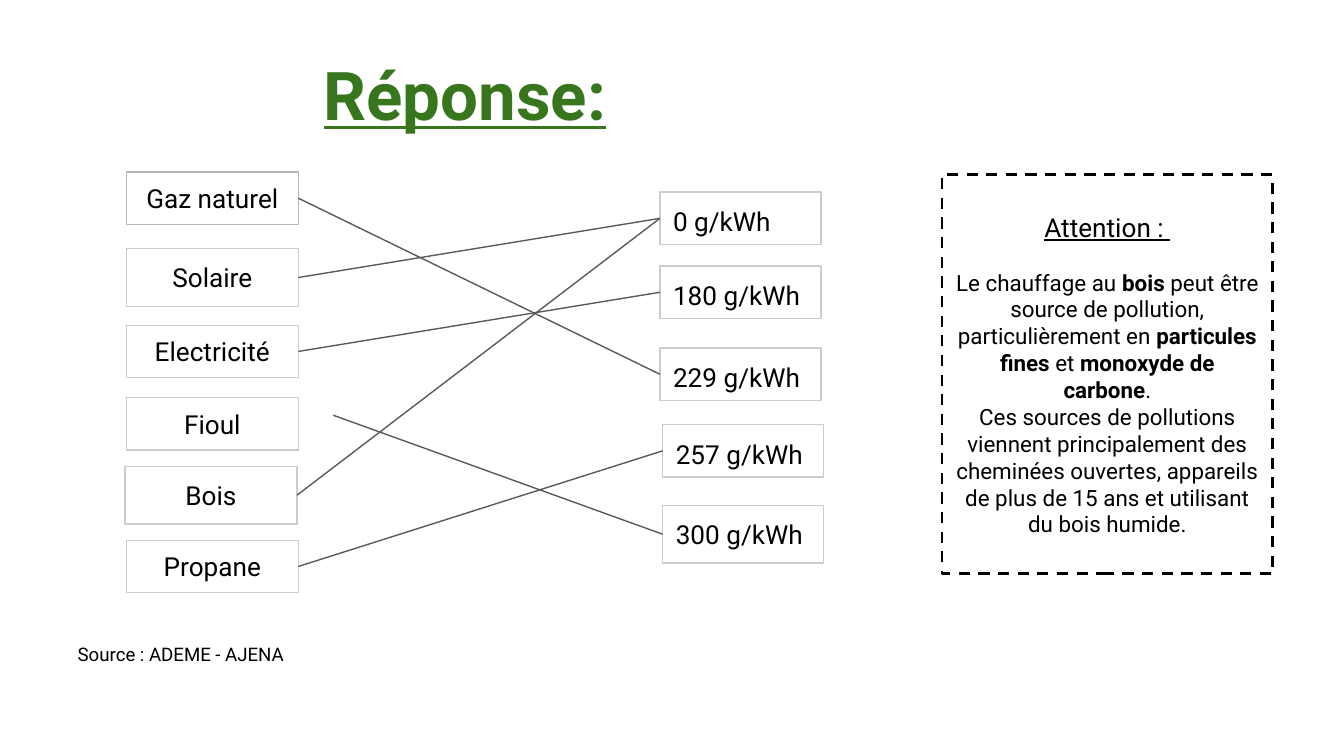
import pptx
import pptx.dml.color
import pptx.enum.dml
import pptx.enum.shapes
import pptx.enum.text
import pptx.oxml.ns
import pptx.util
from lxml import etree
from pptx.util import Inches

FONT = "Roboto"
ALIGN = pptx.enum.text.PP_ALIGN
ANCHOR = pptx.enum.text.MSO_ANCHOR
LEFT, RIGHT = 1, 3

ENERGIES = [
    ("Gaz naturel", 0.94, 1.28, 0.39, "B7B7B7"),
    ("Solaire", 0.94, 1.85, 0.43, "CCCCCC"),
    ("Electricité", 0.94, 2.42, 0.39, "CCCCCC"),
    ("Fioul", 0.94, 2.96, 0.39, "CCCCCC"),
    ("Bois", 0.93, 3.47, 0.43, "CCCCCC"),
    ("Propane", 0.94, 4.02, 0.39, "CCCCCC"),
]
EMISSIONS = [
    ("0 g/kWh", 4.91, 1.43, 0.39),
    ("180 g/kWh", 4.91, 1.98, 0.39),
    ("229 g/kWh", 4.91, 2.59, 0.39),
    ("257 g/kWh", 4.93, 3.16, 0.39),
    ("300 g/kWh", 4.93, 3.76, 0.43),
]
ANSWERS = [
    ("Solaire", "0 g/kWh"),
    ("Bois", "0 g/kWh"),
    ("Electricité", "180 g/kWh"),
    ("Propane", "257 g/kWh"),
    ("Gaz naturel", "229 g/kWh"),
]
WARNING = [
    ("Le chauffage au ", False),
    ("bois", True),
    (" peut être source de pollution, particulièrement en ", False),
    ("particules fines", True),
    (" et ", False),
    ("monoxyde de carbone", True),
    (".", False),
]
ADVICE = (
    "Ces sources de pollutions viennent principalement des cheminées ouvertes, "
    "appareils de plus de 15 ans et utilisant du bois humide."
)


def rgb(value):
    """Return the colour for a hex string."""
    return pptx.dml.color.RGBColor.from_string(value)


def add_run(p, text, size=14, color="000000", bold=False, underline=False):
    """Append a formatted run to a paragraph."""
    r = p.add_run()
    r.text = text
    r.font.name = FONT
    r.font.size = pptx.util.Pt(size)
    r.font.color.rgb = rgb(color)
    r.font.bold = bold
    r.font.underline = underline


def set_frame(sp, anchor):
    """Set wrapping, margins and anchor."""
    tf = sp.text_frame
    tf.word_wrap = True
    tf.vertical_anchor = anchor
    tf.margin_left = tf.margin_right = Inches(0.1)
    tf.margin_top = tf.margin_bottom = Inches(0.1)


def add_box(s, x, y, w, h, line="CCCCCC", width=0.75, anchor=ANCHOR.MIDDLE):
    """Add an outlined rectangle without fill."""
    kind = pptx.enum.shapes.MSO_SHAPE.RECTANGLE
    sp = s.shapes.add_shape(kind, Inches(x), Inches(y), Inches(w), Inches(h))
    sp.shadow.inherit = False
    sp.fill.background()
    sp.line.color.rgb = rgb(line)
    sp.line.width = pptx.util.Pt(width)
    set_frame(sp, anchor)
    return sp


def add_label(sp, text, align, **style):
    """Write one line of text in a shape."""
    p = sp.text_frame.paragraphs[0]
    p.alignment = align
    add_run(p, text, **style)


def add_text(s, text, x, y, w, h, align=ALIGN.LEFT, **style):
    """Add a text box holding one line."""
    sp = s.shapes.add_textbox(Inches(x), Inches(y), Inches(w), Inches(h))
    set_frame(sp, ANCHOR.TOP)
    add_label(sp, text, align, **style)


def add_link(s, target, source=None, start=(0, 0)):
    """Draw a line to the left side of a box, from a box or a free point."""
    kind = pptx.enum.shapes.MSO_CONNECTOR.STRAIGHT
    x, y = Inches(start[0]), Inches(start[1])
    cx = s.shapes.add_connector(kind, x, y, x, y)
    if source is not None:
        cx.begin_connect(source, RIGHT)
    cx.end_connect(target, LEFT)
    cx.line.color.rgb = rgb("595959")
    cx.line.width = pptx.util.Pt(0.75)
    etree.SubElement(cx._element.spPr, pptx.oxml.ns.qn("a:effectLst"))


def add_warning(s):
    """Add the dashed box about wood heating."""
    sp = add_box(s, 7.01, 1.3, 2.46, 2.97, line="000000", width=1.5)
    sp.line.dash_style = pptx.enum.dml.MSO_LINE.DASH
    add_label(sp, "Attention : ", ALIGN.CENTER, underline=True)
    for i, runs in enumerate([WARNING, [(ADVICE, False)]]):
        p = sp.text_frame.add_paragraph()
        p.alignment = ALIGN.CENTER
        p.space_before = pptx.util.Pt(0 if i else 14)
        for text, bold in runs:
            add_run(p, text, size=12, bold=bold)


def main():
    """Build and save the slide."""
    prs = pptx.Presentation()
    prs.slide_width = Inches(10)
    prs.slide_height = Inches(10) * 9 // 16
    s = prs.slides.add_slide(prs.slide_layouts[6])
    add_warning(s)
    boxes = {}
    for text, x, y, h, line in ENERGIES:
        boxes[text] = add_box(s, x, y, 1.28, h, line=line)
        add_label(boxes[text], text, ALIGN.CENTER)
    for text, x, y, h in EMISSIONS:
        boxes[text] = add_box(s, x, y, 1.2, h, anchor=ANCHOR.TOP)
        add_label(boxes[text], text, ALIGN.LEFT)
    for energy, emission in ANSWERS:
        add_link(s, boxes[emission], source=boxes[energy])
    add_link(s, boxes["300 g/kWh"], start=(2.48, 3.09))
    add_text(s, "Réponse:", 1.82, 0.3, 3.28, 0.7, align=ALIGN.CENTER,
             size=36, color="38761D", bold=True, underline=True)
    add_text(s, "Source : ADEME - AJENA", 0.48, 4.7, 3.11, 0.4, size=10)
    prs.save("out.pptx")


if __name__ == "__main__":
    main()
